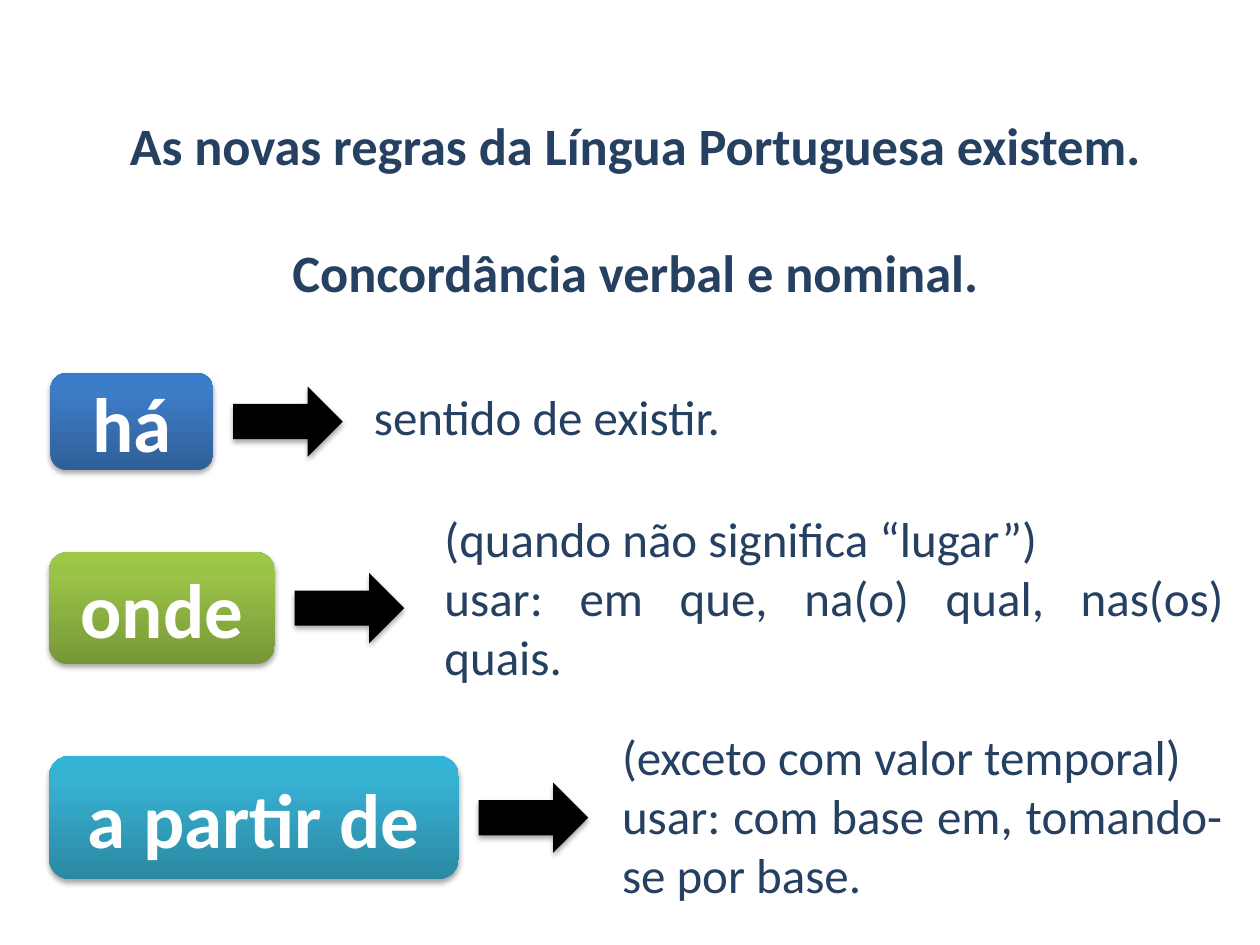
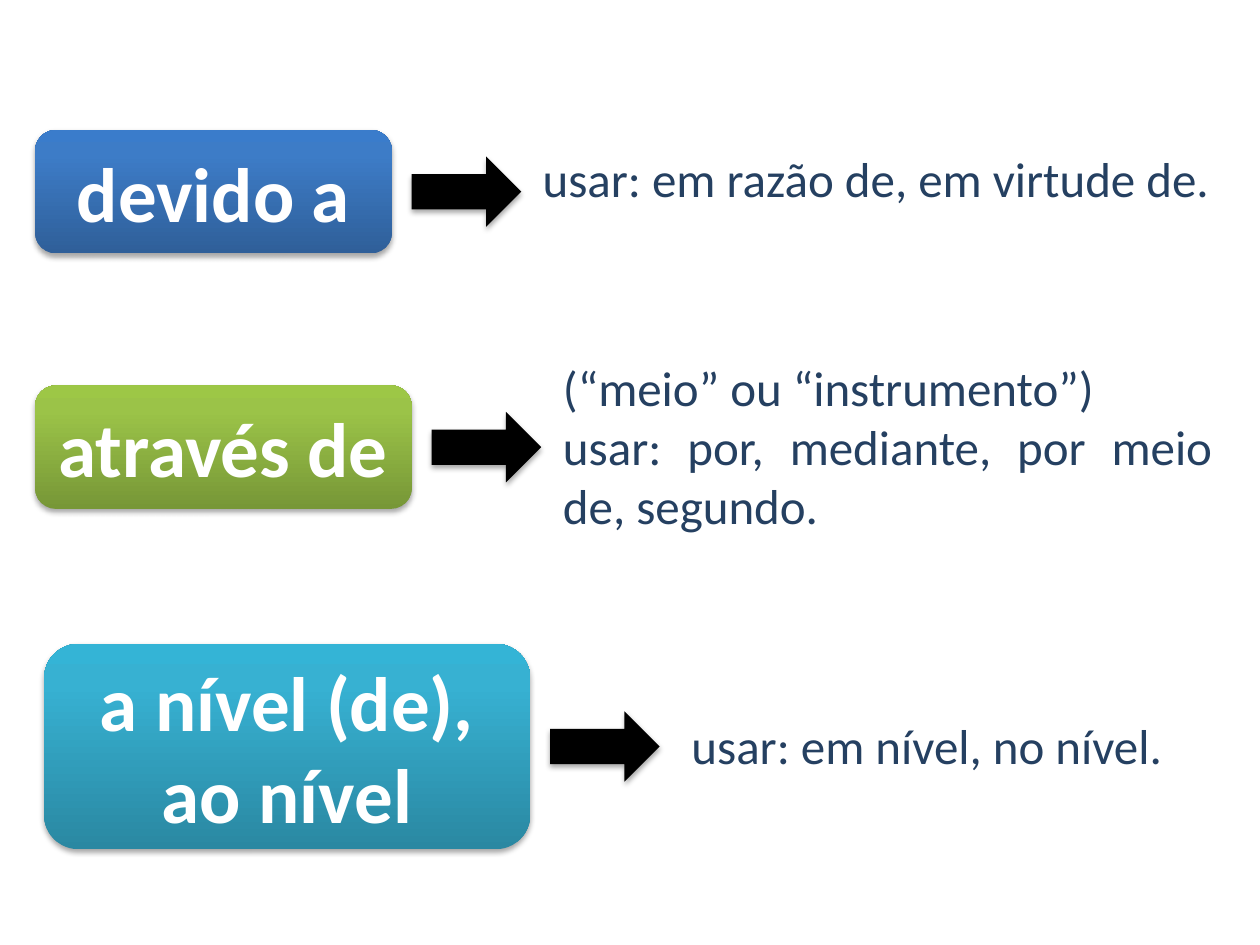
from copy import deepcopy
from dataclasses import dataclass

from lxml.etree import SubElement
from pptx import Presentation
from pptx.dml.color import RGBColor
from pptx.enum.shapes import MSO_SHAPE
from pptx.enum.text import MSO_ANCHOR, MSO_AUTO_SIZE, PP_ALIGN
from pptx.oxml.ns import qn
from pptx.util import Cm, Pt


@dataclass(frozen=True)
class Theme:
    font: str = "Calibri"
    navy: str = "254061"
    white: str = "FFFFFF"
    black: str = "000000"
    # Gradient colours from the bottom of a term box to its top
    term_gradients: tuple = (
        ("2F5F99", "3D7CC7", "3A7CCB"),
        ("779737", "9BC348", "9DC746"),
        ("2A88A2", "37B1D2", "34B4D6"),
    )
    gradient_positions: tuple = (0, 0.8, 1)
    heading_size: int = 30
    heading_gap: float = 36.6
    term_size: int = 44
    usage_size: int = 28


@dataclass(frozen=True)
class Rule:
    """A term box (left, top, width, height) and its usage note (left, top, width), in cm."""
    term: str
    term_box: tuple
    usage: tuple
    usage_box: tuple
    usage_lines: int = 1


THEME = Theme()
ARROW_WIDTH, ARROW_HEIGHT, ARROW_GAP = 2.21, 1.42, 0.4

HEADING = ("As novas regras da Língua Portuguesa existem.",
           "Concordância verbal e nominal.")

EXISTENCE_RULES = (
    Rule("há", (1.02, 7.52, 3.28, 1.96),
         ("sentido de existir.",), (7.29, 7.67, 17.2)),
    Rule("onde", (0.99, 11.13, 4.55, 2.26),
         ("(quando não significa “lugar”)",
          "usar: em que, na(o) qual, nas(os) quais."),
         (8.71, 10.13, 16.21), 3),
    Rule("a partir de", (0.99, 15.24, 8.26, 2.49),
         ("(exceto com valor temporal)",
          "usar: com base em, tomando-se por base."),
         (12.29, 14.53, 12.6), 3),
)

REPLACEMENT_RULES = (
    Rule("devido a", (0.71, 2.62, 7.19, 2.49),
         ("usar: em razão de, em virtude de.",), (10.69, 2.87, 14.4)),
    Rule("através de", (0.71, 7.77, 7.59, 2.49),
         ("(“meio” ou “instrumento”)",
          "usar: por, mediante, por meio de, segundo."),
         (11.1, 7.09, 13.59), 3),
    Rule("a nível (de), ao nível", (0.89, 12.98, 9.8, 4.14),
         ("usar: em nível, no nível.",), (13.69, 14.3, 11)),
)


def write_paragraphs(frame, lines, size, color, align, bold=False, gap=0):
    frame.word_wrap = True
    frame.text = "\n".join(lines)
    for index, paragraph in enumerate(frame.paragraphs):
        paragraph.alignment = align
        if index and gap:
            paragraph.space_before = Pt(gap)
        for run in paragraph.runs:
            run.font.name = THEME.font
            run.font.size = Pt(size)
            run.font.bold = bold
            run.font.color.rgb = RGBColor.from_string(color)


def add_text(slide, box, lines, size, align, **style):
    textbox = slide.shapes.add_textbox(*map(Cm, box))
    write_paragraphs(textbox.text_frame, lines, size, THEME.navy, align, **style)
    textbox.text_frame.auto_size = MSO_AUTO_SIZE.SHAPE_TO_FIT_TEXT


def add_raised_shape(slide, preset, box):
    """Add a borderless shape with a soft shadow below it."""
    shape = slide.shapes.add_shape(preset, *map(Cm, box))
    shape.line.fill.background()
    shape.shadow.inherit = False
    effects = shape.element.spPr.find(qn("a:effectLst"))
    shadow = SubElement(effects, qn("a:outerShdw"), blurRad="40000",
                        dist="23000", dir="5400000", rotWithShape="0")
    color = SubElement(shadow, qn("a:srgbClr"), val=THEME.black)
    SubElement(color, qn("a:alpha"), val="35000")
    return shape


def fill_gradient(shape, colors):
    shape.fill.gradient()
    shape.fill.gradient_angle = 90
    stop_list = shape.element.spPr.find(qn("a:gradFill")).find(qn("a:gsLst"))
    stop_list.append(deepcopy(stop_list[0]))
    stops = shape.fill.gradient_stops
    for stop, color, position in zip(stops, colors, THEME.gradient_positions):
        stop.color.rgb = RGBColor.from_string(color)
        stop.position = position


def add_term(slide, term, box, colors):
    term_box = add_raised_shape(slide, MSO_SHAPE.ROUNDED_RECTANGLE, box)
    fill_gradient(term_box, colors)
    term_box.text_frame.vertical_anchor = MSO_ANCHOR.MIDDLE
    write_paragraphs(term_box.text_frame, (term,), THEME.term_size,
                     THEME.white, PP_ALIGN.CENTER, bold=True)


def add_arrow_after(slide, term_box):
    """Point right from a term box, level with its middle."""
    left, top, width, height = term_box
    arrow = add_raised_shape(
        slide, MSO_SHAPE.RIGHT_ARROW,
        (left + width + ARROW_GAP, top + (height - ARROW_HEIGHT) / 2,
         ARROW_WIDTH, ARROW_HEIGHT))
    arrow.fill.solid()
    arrow.fill.fore_color.rgb = RGBColor.from_string(THEME.black)


def add_rules(slide, rules):
    for rule, colors in zip(rules, THEME.term_gradients):
        add_term(slide, rule.term, rule.term_box, colors)
        add_arrow_after(slide, rule.term_box)
        usage_height = 0.25 + 1.2 * rule.usage_lines
        add_text(slide, (*rule.usage_box, usage_height), rule.usage,
                 THEME.usage_size, PP_ALIGN.JUSTIFY)


def main():
    deck = Presentation()
    deck.slide_width, deck.slide_height = Cm(25.4), Cm(19.05)
    blank = deck.slide_layouts[6]

    existence = deck.slides.add_slide(blank)
    add_text(existence, (0.71, 2.16, 24.21, 4.11), HEADING, THEME.heading_size,
             PP_ALIGN.CENTER, bold=True, gap=THEME.heading_gap)
    add_rules(existence, EXISTENCE_RULES)

    replacements = deck.slides.add_slide(blank)
    add_rules(replacements, REPLACEMENT_RULES)

    deck.save("out.pptx")


if __name__ == "__main__":
    main()
